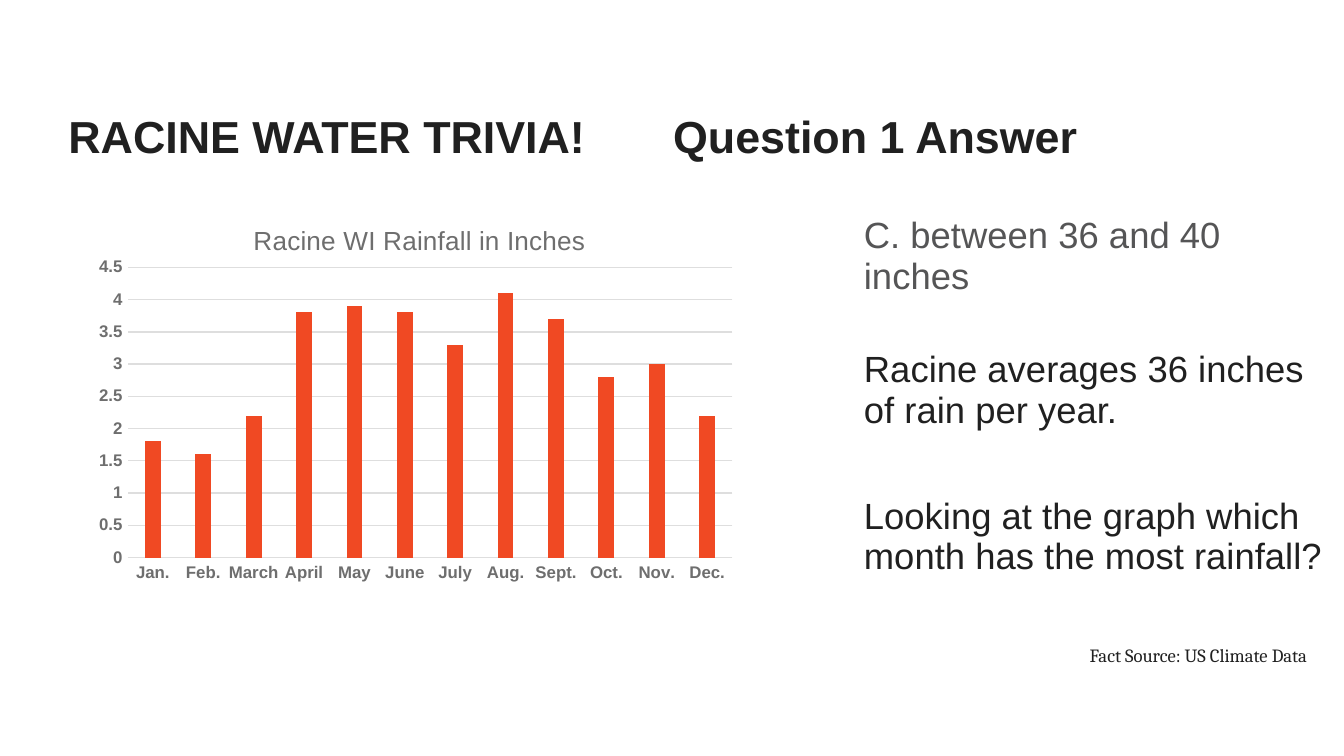
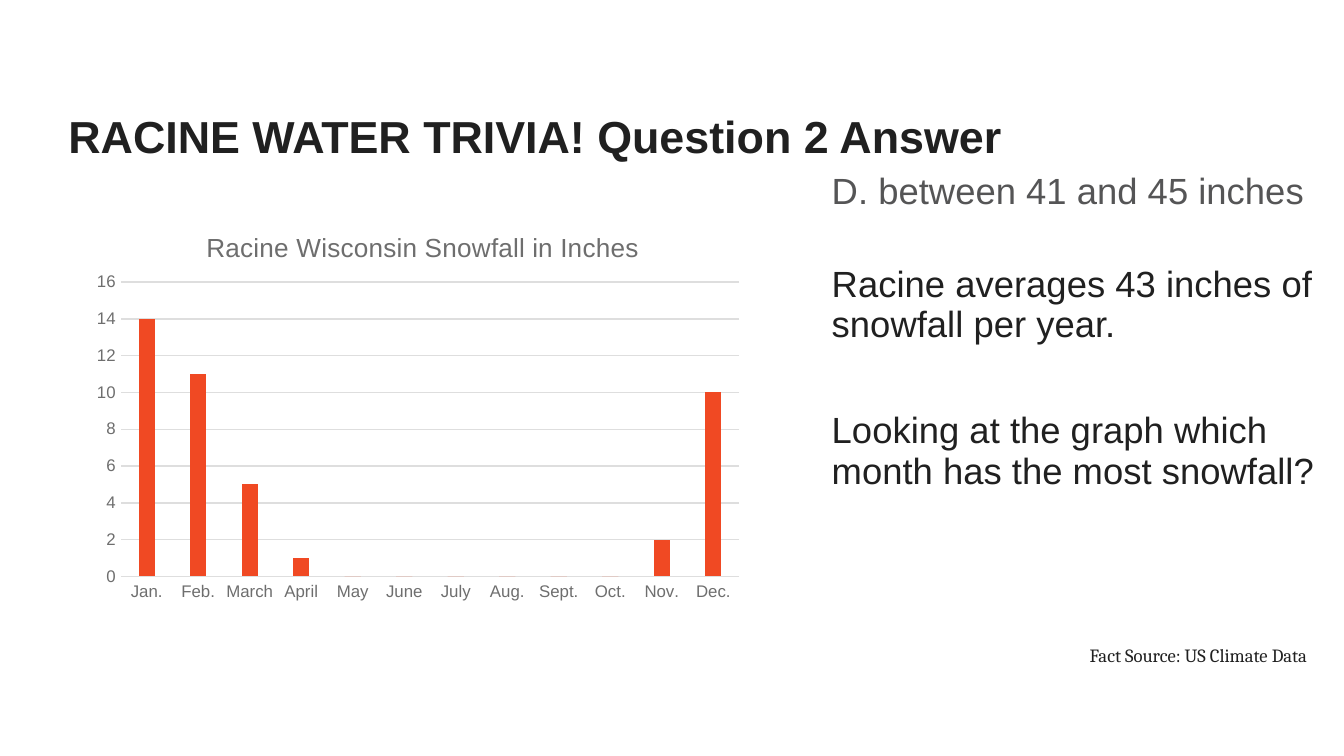
from dataclasses import dataclass

from lxml.etree import SubElement
from pptx import Presentation
from pptx.chart.data import CategoryChartData
from pptx.dml.color import RGBColor
from pptx.enum.chart import XL_CHART_TYPE, XL_TICK_MARK
from pptx.enum.text import MSO_ANCHOR
from pptx.oxml.ns import qn
from pptx.util import Inches, Pt


@dataclass(frozen=True)
class Theme:
    ink: str = "202020"
    answer: str = "555556"
    label: str = "6E6E6E"
    rule: str = "DEDEDE"
    bar: str = "F04923"
    sans: str = "Arial"
    serif: str = "Cambria"
    title_size: float = 24
    body_size: float = 19.5
    chart_title_size: float = 14
    chart_size: float = 10
    axis_size: float = 9
    source_size: float = 10


COLS, ROWS = 100, 56.25
MONTHS = ["Jan.", "Feb.", "March", "April", "May", "June",
          "July", "Aug.", "Sept.", "Oct.", "Nov.", "Dec."]
TITLE_BOX = (4.1, 3.8, 87.5, 8.8)
SOURCE_BOX = (80.1, 47.4, 20.7, 8.8)
TITLE_TAB = 45
BODY_GAPS = (0, 28, 35)


def style_font(font, size, color, name, bold=False):
    font.size, font.name, font.bold = Pt(size), name, bold
    font.color.rgb = RGBColor.from_string(color)


def add_text(tf, text, *, size, color, name, bold=False, spacing=1.0, before=0, tab=None):
    """Write one paragraph, reusing the first one while it is still empty."""
    p = tf.paragraphs[0] if not tf.text else tf.add_paragraph()
    p.line_spacing = spacing
    if before:
        p.space_before = Pt(before)
    if tab:
        tabs = SubElement(p._p.get_or_add_pPr(), qn("a:tabLst"))
        SubElement(tabs, qn("a:tab"), pos=str(tab), algn="l")
    r = p.add_run()
    r.text = text
    style_font(r.font, size, color, name, bold)


def set_layout(parent, after, inner=False, **shares):
    """Place a chart part by shares of the chart, after the named child."""
    for old in parent.findall(qn("c:layout")):
        parent.remove(old)
    layout = SubElement(parent, qn("c:layout"))
    manual = SubElement(layout, qn("c:manualLayout"))
    if inner:
        SubElement(manual, qn("c:layoutTarget"), val="inner")
    for key in ("x", "y"):
        SubElement(manual, qn(f"c:{key}Mode"), val="edge")
    for key, share in shares.items():
        SubElement(manual, qn(f"c:{key}"), val=str(share))
    anchor = parent.find(qn(after)) if after else None
    parent.insert(0 if anchor is None else parent.index(anchor) + 1, layout)


class Deck:
    """Holds the theme and the slide being filled; boxes are (col, row, cols, rows)."""

    def __init__(self, theme):
        self.theme = theme
        self.prs = Presentation()
        self.prs.slide_width, self.prs.slide_height = Inches(10), Inches(5.625)
        self.s = None

    def cols(self, n):
        return round(self.prs.slide_width * n / COLS)

    def rows(self, n):
        return round(self.prs.slide_height * n / ROWS)

    def place(self, box):
        x, y, w, h = box
        return self.cols(x), self.rows(y), self.cols(w), self.rows(h)

    def new_slide(self):
        self.s = self.prs.slides.add_slide(self.prs.slide_layouts[6])

    def text_frame(self, box, anchor=MSO_ANCHOR.TOP):
        tf = self.s.shapes.add_textbox(*self.place(box)).text_frame
        tf.word_wrap = True
        tf.vertical_anchor = anchor
        return tf

    def title(self, text):
        t = self.theme
        add_text(self.text_frame(TITLE_BOX, MSO_ANCHOR.BOTTOM), text,
                 size=t.title_size, color=t.ink, name=t.sans, bold=True,
                 spacing=0.9, tab=self.cols(TITLE_TAB) if "\t" in text else None)

    def body(self, box, lines, drop=0):
        """Write the answer and its follow-ups, starting `drop` rows lower."""
        t = self.theme
        tf = self.text_frame(box)
        tf.margin_top = self.rows(0.5 + drop)
        for i, (line, gap) in enumerate(zip(lines, BODY_GAPS)):
            add_text(tf, line, size=t.body_size, color=t.ink if i else t.answer,
                     name=t.sans, spacing=0.93, before=gap)

    def source(self, text):
        t = self.theme
        add_text(self.text_frame(SOURCE_BOX), text,
                 size=t.source_size, color=t.ink, name=t.serif)

    def axis(self, axis, bold):
        t = self.theme
        axis.major_tick_mark = axis.minor_tick_mark = XL_TICK_MARK.NONE
        style_font(axis.tick_labels.font, t.axis_size, t.label, t.sans, bold)

    def rule(self, line):
        line.color.rgb = RGBColor.from_string(self.theme.rule)
        line.width = Pt(0.75)

    def column_chart(self, box, title, values, top, step, plot, title_x, bold=False):
        t = self.theme
        data = CategoryChartData()
        data.categories = MONTHS
        data.add_series("Series 1", values)
        chart = self.s.shapes.add_chart(
            XL_CHART_TYPE.COLUMN_CLUSTERED, *self.place(box), data).chart
        style_font(chart.font, t.chart_size, t.ink, t.sans)
        chart.has_legend = False

        add_text(chart.chart_title.text_frame, title,
                 size=t.chart_title_size, color=t.label, name=t.sans)
        chart.chart_title.include_in_layout = False
        set_layout(chart.chart_title._element, "c:tx", x=title_x, y=0.05)
        x, y, w, h = plot
        set_layout(chart._chartSpace.chart.plotArea, None, inner=True, x=x, y=y, w=w, h=h)

        self.axis(chart.category_axis, bold)
        self.rule(chart.category_axis.format.line)
        val = chart.value_axis
        self.axis(val, bold)
        val.minimum_scale, val.maximum_scale, val.major_unit = 0, top, step
        val.format.line.fill.background()
        val.tick_labels.number_format = "General"
        val.tick_labels.number_format_is_linked = False
        self.rule(val.major_gridlines.format.line)

        columns = chart.plots[0]
        columns.gap_width, columns.overlap = 219, -27
        columns.vary_by_categories = False
        fill = columns.series[0].format.fill
        fill.solid()
        fill.fore_color.rgb = RGBColor.from_string(t.bar)


ANSWERS = [
    dict(title="RACINE WATER TRIVIA! \tQuestion 1 Answer",
         body=dict(box=(63.3, 12.3, 36.7, 38.2), drop=3.3, lines=[
             "C. between 36 and 40 inches",
             "Racine averages 36 inches of rain per year.",
             "Looking at the graph which month has the most rainfall?"]),
         chart=dict(box=(6, 14.8, 50, 30), title="Racine WI Rainfall in Inches",
                    values=[1.8, 1.6, 2.2, 3.8, 3.9, 3.8, 3.3, 4.1, 3.7, 2.8, 3, 2.2],
                    top=4.5, step=0.5, plot=(0.07, 0.17, 0.9, 0.72),
                    title_x=0.25, bold=True)),
    dict(title="RACINE WATER TRIVIA! Question 2 Answer",
         body=dict(box=(60.9, 12.3, 39.1, 38.2), lines=[
             "D. between 41 and 45 inches",
             "Racine averages 43 inches of snowfall per year.",
             "Looking at the graph which month has the most snowfall?"]),
         chart=dict(box=(6, 15.3, 50, 30), title="Racine Wisconsin Snowfall in Inches",
                    values=[14, 11, 5, 1, 0, 0, 0, 0, 0, 0, 2, 10],
                    top=16, step=2, plot=(0.06, 0.19, 0.92, 0.73), title_x=0.18)),
]


def main():
    deck = Deck(Theme())
    for answer in ANSWERS:
        deck.new_slide()
        deck.title(answer["title"])
        deck.body(**answer["body"])
        deck.column_chart(**answer["chart"])
        deck.source("Fact Source: US Climate Data")
    deck.prs.save("out.pptx")


if __name__ == "__main__":
    main()
